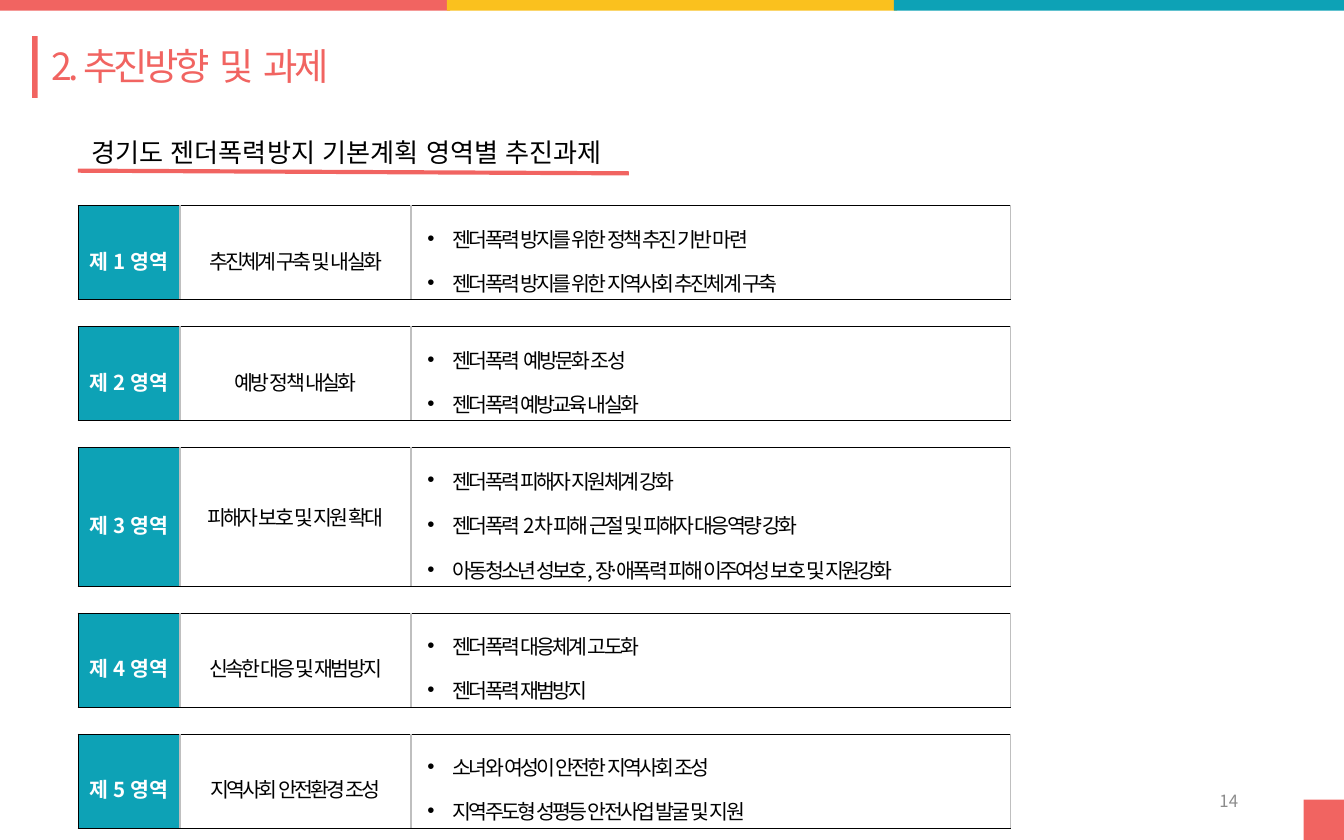
from lxml import etree
from pptx import Presentation
from pptx.dml.color import RGBColor
from pptx.enum import shapes, text
from pptx.oxml import ns
from pptx.util import Inches, Pt

FONT = "Noto Sans CJK KR"
CORAL = RGBColor(0xF1, 0x64, 0x61)
YELLOW = RGBColor(0xFA, 0xC1, 0x1E)
TEAL = RGBColor(0x0D, 0xA2, 0xB6)
GRAY = RGBColor(0x8C, 0x8C, 0x8C)
LIGHT_GRAY = RGBColor(0xBF, 0xBF, 0xBF)
BLACK = RGBColor(0, 0, 0)
WHITE = RGBColor(0xFF, 0xFF, 0xFF)

THIN = (BLACK, 0.28)
DIVIDER = (LIGHT_GRAY, 1)
COLUMNS = (0.76, 1.72, 4.46)
AREA_HEIGHTS = {2: 0.7, 3: 1.03}  # by number of tasks
GAP_ROW = 0.2

AREAS = [
    ("추진체계 구축 및 내실화",
     ["젠더폭력 방지를 위한 정책 추진 기반 마련",
      "젠더폭력 방지를 위한 지역사회 추진체계 구축"]),
    ("예방 정책 내실화",
     ["젠더폭력  예방문화 조성", "젠더폭력 예방교육 내실화"]),
    ("피해자 보호 및 지원 확대",
     ["젠더폭력 피해자 지원체계 강화",
      "젠더폭력 2차 피해 근절 및 피해자 대응역량 강화",
      "아동청소년 성보호, 장애〮폭력 피해 이주여성 보호 및 지원강화"]),
    ("신속한 대응 및 재범방지",
     ["젠더폭력 대응체계 고도화", "젠더폭력 재범방지"]),
    ("지역사회 안전환경 조성",
     ["소녀와 여성이 안전한 지역사회 조성",
      "지역주도형 성평등 안전사업 발굴 및 지원"]),
]


def write(frame, lines, size, color=BLACK, bold=False, align=text.PP_ALIGN.LEFT,
          line_spacing=1.0, tracking=0, bullet=False):
    """Write one paragraph for each line, all in the same format."""
    for i, line in enumerate(lines):
        p = frame.paragraphs[0] if i == 0 else frame.add_paragraph()
        p.alignment, p.line_spacing = align, line_spacing
        run = p.add_run()
        run.text = line
        font = run.font
        font.size, font.bold, font.name = Pt(size), bold, FONT
        font.color.rgb = color
        props = run._r.get_or_add_rPr()
        props.set("lang", "ko-KR")
        props.set("kern", "0")
        props.set("spc", str(int(tracking * 100)))
        etree.SubElement(props, ns.qn("a:ea")).set("typeface", FONT)
        if bullet:
            para = p._p.get_or_add_pPr()
            para.set("marL", str(Inches(0.29)))
            para.set("indent", str(Inches(-0.19)))
            etree.SubElement(para, ns.qn("a:buFont")).set("typeface", "Arial")
            etree.SubElement(para, ns.qn("a:buChar")).set("char", "•")


def add_label(slide, box, line, anchor=text.MSO_ANCHOR.TOP, **style):
    frame = slide.shapes.add_textbox(*map(Inches, box)).text_frame
    frame.word_wrap = True
    frame.vertical_anchor = anchor
    write(frame, [line], **style)


def add_block(slide, box, color):
    block = slide.shapes.add_shape(shapes.MSO_SHAPE.RECTANGLE, *map(Inches, box))
    block.shadow.inherit = False
    block.fill.solid()
    block.fill.fore_color.rgb = color
    block.line.fill.background()


def set_borders(cell, left, right, top, bottom):
    """Draw the cell edges; None leaves an edge without a line."""
    props = cell._tc.get_or_add_tcPr()
    for tag, edge in zip(("lnL", "lnR", "lnT", "lnB"), (left, right, top, bottom)):
        line = etree.SubElement(props, ns.qn("a:" + tag))
        if edge is None:
            etree.SubElement(line, ns.qn("a:noFill"))
            continue
        color, width = edge
        line.set("w", str(Pt(width)))
        fill = etree.SubElement(line, ns.qn("a:solidFill"))
        etree.SubElement(fill, ns.qn("a:srgbClr")).set("val", str(color))


def format_cell(cell, left, right, fill=None, margin=0.02):
    set_borders(cell, left, right, THIN, THIN)
    if fill is None:
        cell.fill.background()
    else:
        cell.fill.solid()
        cell.fill.fore_color.rgb = fill
    cell.vertical_anchor = text.MSO_ANCHOR.MIDDLE
    cell.margin_left = cell.margin_right = Inches(margin)
    cell.margin_top = cell.margin_bottom = Inches(margin)


def fill_area_row(cells, number, name, tasks):
    number_cell, name_cell, tasks_cell = cells
    format_cell(number_cell, THIN, DIVIDER, fill=TEAL)
    format_cell(name_cell, DIVIDER, DIVIDER)
    format_cell(tasks_cell, DIVIDER, DIVIDER)
    center = text.PP_ALIGN.CENTER
    write(number_cell.text_frame, [f"제 {number} 영역"], 11, WHITE, bold=True,
          align=center, line_spacing=1.5)
    write(name_cell.text_frame, [name], 11, align=center, tracking=-1.5,
          line_spacing=1.0 if len(tasks) > 2 else 1.5)
    write(tasks_cell.text_frame, tasks, 11, tracking=-1.5, line_spacing=1.5,
          bullet=True)


def fill_gap_row(cells):
    for cell in cells:
        format_cell(cell, None, None, margin=0)
        # A small end mark keeps the empty row at its height
        end = etree.SubElement(cell.text_frame.paragraphs[0]._p, ns.qn("a:endParaRPr"))
        end.set("sz", "600")
    cells[0].merge(cells[-1])


def add_area_table(slide, left, top):
    heights = [GAP_ROW] * (2 * len(AREAS) - 1)
    heights[::2] = [AREA_HEIGHTS[len(tasks)] for _, tasks in AREAS]
    box = (left, top, sum(COLUMNS), sum(heights))
    table = slide.shapes.add_table(len(heights), len(COLUMNS),
                                   *map(Inches, box)).table
    table.first_row = table.horz_banding = False
    for column, width in zip(table.columns, COLUMNS):
        column.width = Inches(width)
    for i, (row, height) in enumerate(zip(table.rows, heights)):
        row.height = Inches(height)
        cells = list(row.cells)
        if i % 2:
            fill_gap_row(cells)
        else:
            fill_area_row(cells, i // 2 + 1, *AREAS[i // 2])


def add_frame(slide, width, height):
    # Three-colour band along the top
    band = 3.35
    step = (width - band) / 2
    for i, color in enumerate((CORAL, YELLOW, TEAL)):
        add_block(slide, (i * step, 0, band, 0.08), color)
    # Corner block and page number
    corner = 0.3
    add_block(slide, (width - corner, height - corner, corner, corner), CORAL)
    add_label(slide, (7.06, 5.79, 2.25, 0.33), "14", size=9, color=GRAY,
              align=text.PP_ALIGN.RIGHT, anchor=text.MSO_ANCHOR.MIDDLE)


def add_heading(slide, left, top):
    # Title with its accent bar
    add_block(slide, (left - 0.04, top, 0.04, 0.46), CORAL)
    title = slide.shapes.title
    title.left, title.top = Inches(left), Inches(top)
    title.width, title.height = Inches(4.88), Inches(0.44)
    frame = title.text_frame
    frame.auto_size = text.MSO_AUTO_SIZE.NONE
    frame.vertical_anchor = text.MSO_ANCHOR.TOP
    write(frame, ["2. 추진방향  및  과제"], 20, CORAL, tracking=-2)

    # Underlined subtitle
    indent = left + 0.3
    add_label(slide, (indent, top + 0.46, 4.03, 0.57),
              "경기도 젠더폭력방지 기본계획 영역별 추진과제", size=14, line_spacing=2.0)
    ends = (indent, top + 1, indent + 4.1, top + 1.02)
    underline = slide.shapes.add_connector(shapes.MSO_CONNECTOR.STRAIGHT,
                                           *map(Inches, ends))
    underline.line.color.rgb = CORAL
    underline.line.width = Pt(2.25)
    etree.SubElement(underline._element.spPr, ns.qn("a:effectLst"))


def main():
    width, height = 10, 6.25
    deck = Presentation()
    deck.slide_width, deck.slide_height = Inches(width), Inches(height)
    slide = deck.slides.add_slide(deck.slide_layouts.get_by_name("Title Only"))
    add_frame(slide, width, height)
    add_area_table(slide, 0.58, 1.53)
    add_heading(slide, 0.28, 0.27)
    deck.save("out.pptx")


if __name__ == "__main__":
    main()
